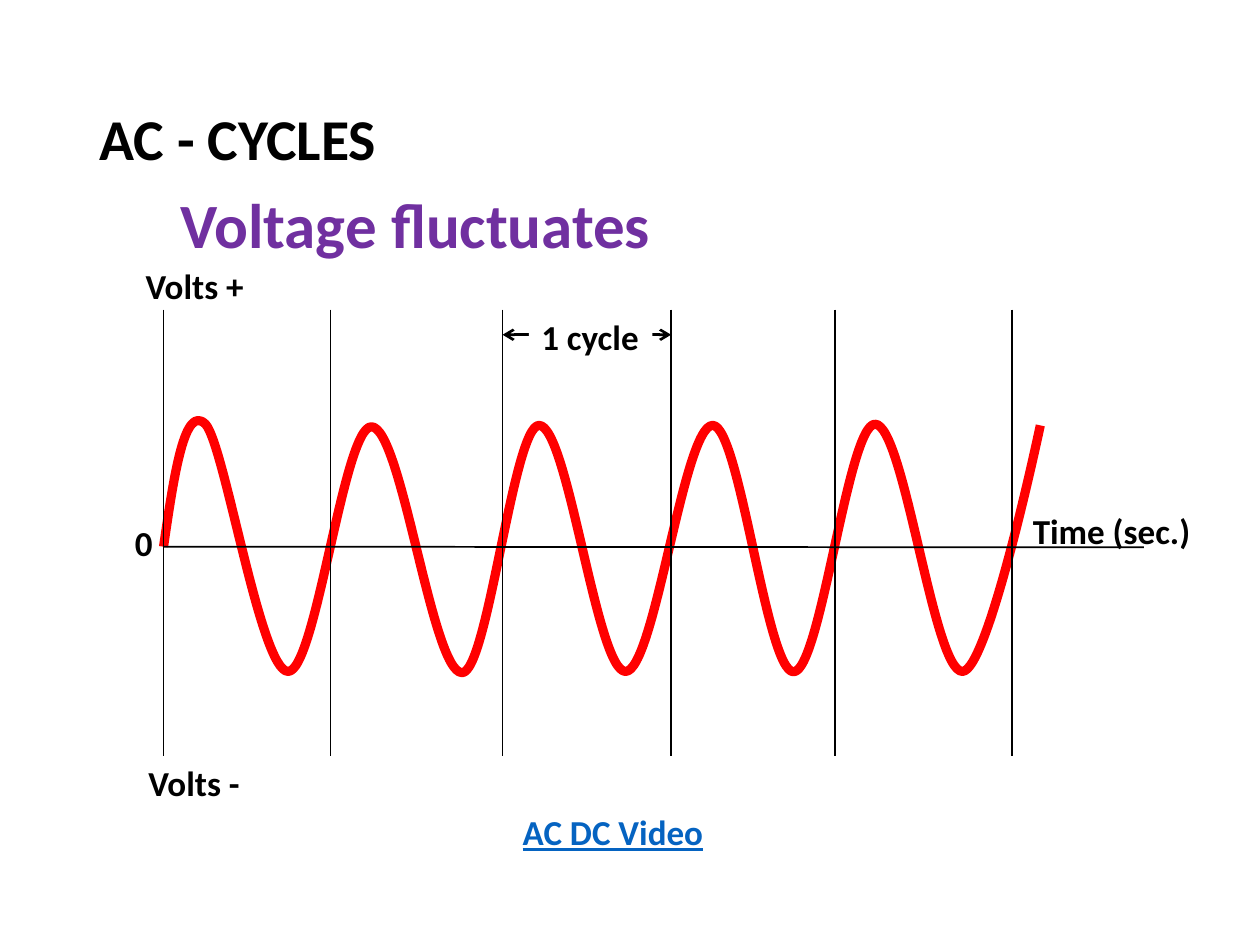
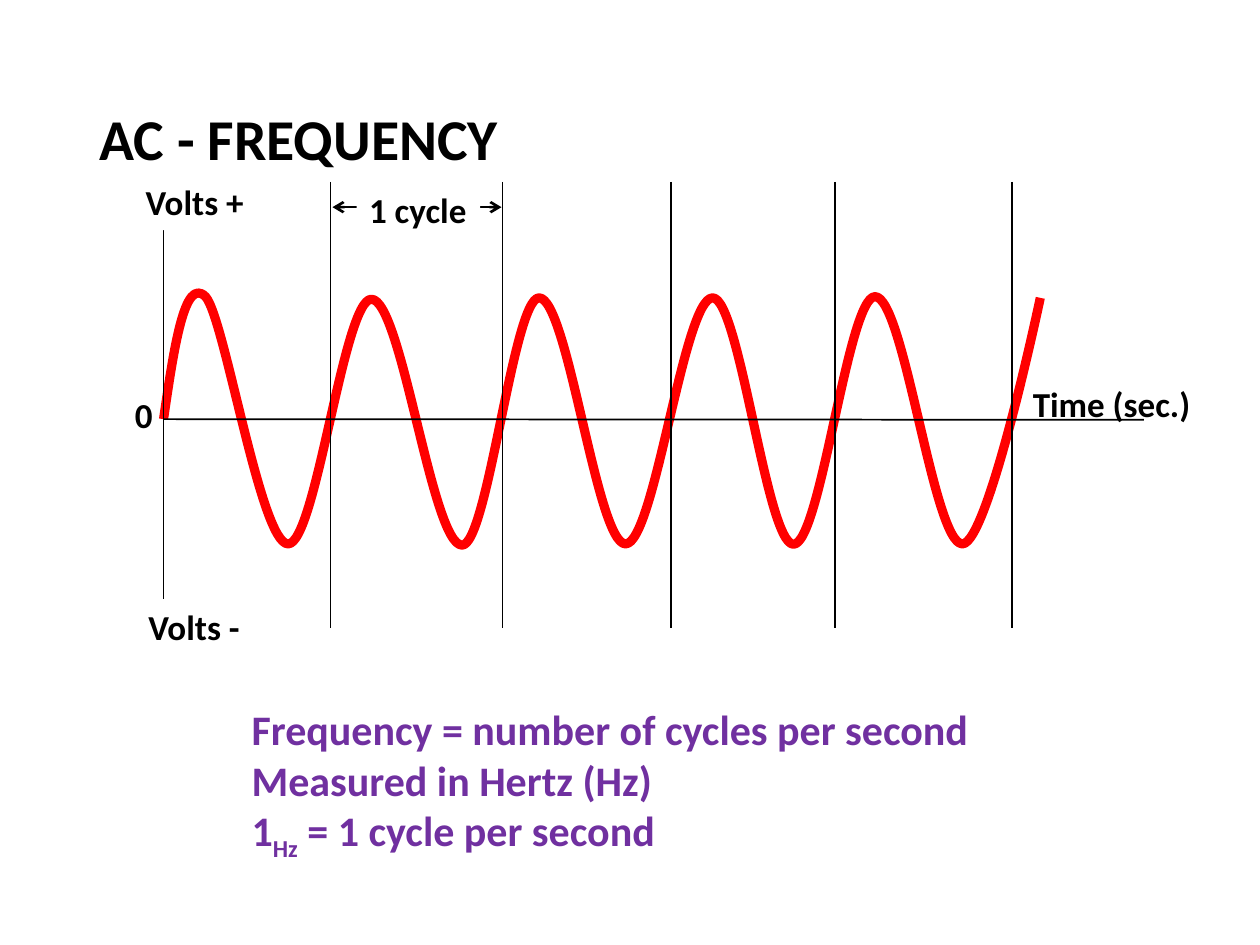
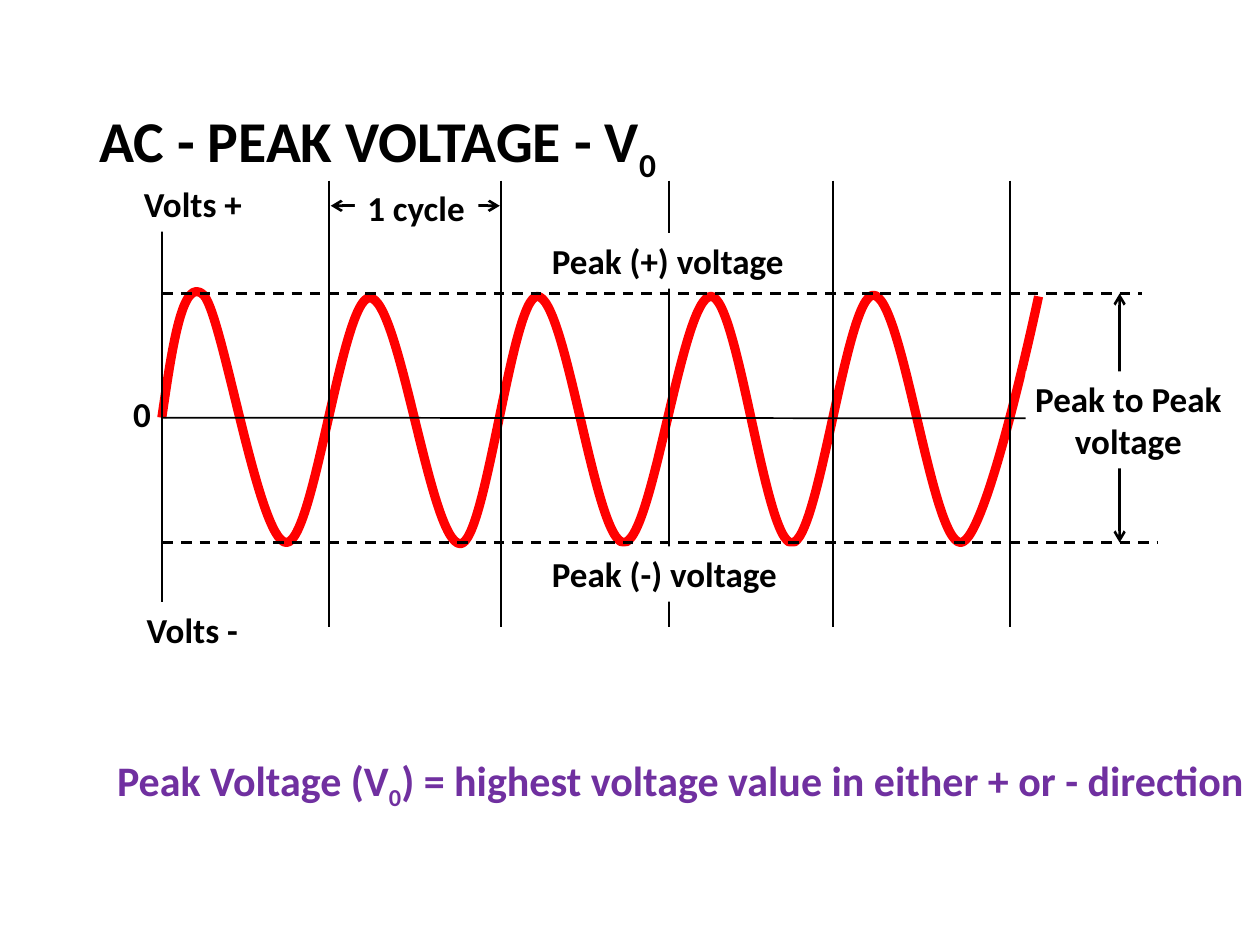
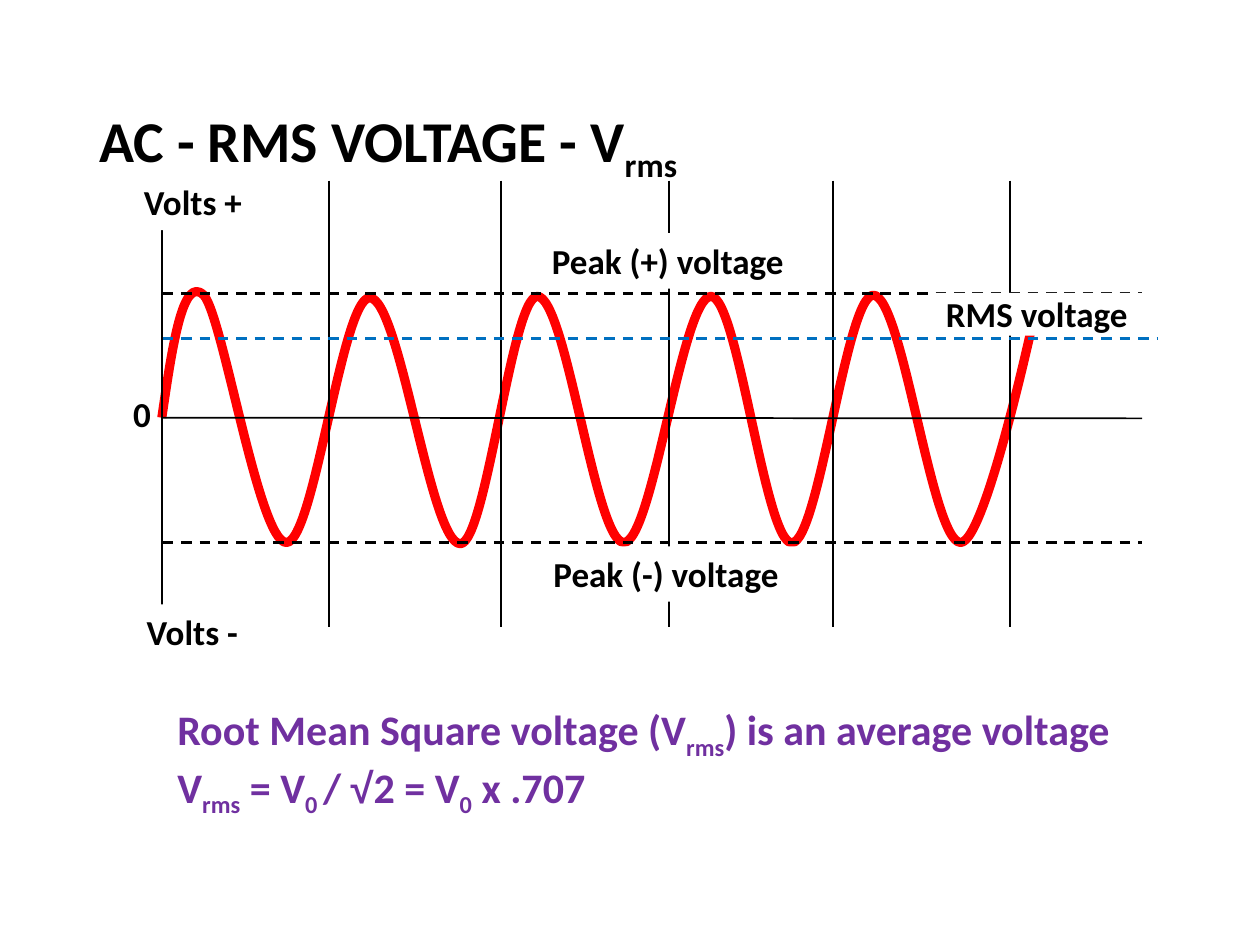
from lxml import etree
from pptx import Presentation
from pptx.dml.color import RGBColor
from pptx.enum import dml, shapes, text
from pptx.oxml import ns
from pptx.util import Pt

COLORS = {"ink": "000000", "paper": "FFFFFF", "wave": "FF0000",
          "accent": "7030A0", "link": "0563C1", "rms": "0070C0"}
FONT, MATH_FONT = "Calibri", "Arial"
LABEL_SIZE, NOTE_SIZE, TITLE_SIZE = 20, 24, 33
LABEL_HEIGHT = 31.7

# Graph geometry, in points from the origin of the axes
GRID = [0, 95.3, 193.7, 290, 383.5, 484.6]
GRID_TOP, GRID_BOTTOM = -135.5, 119.5
AXIS_LENGTH = 560.2
EXTREMES = [(24, -70), (71.2, 71.3), (118.8, -68.5), (170.6, 72), (214.6, -69.3),
            (264, 71.3), (313.8, -69.3), (360, 71.5), (406.6, -70),
            (456.5, 71.3), (501, -69.3)]
PEAK, TROUGH, RMS = -71, 71.3, -45.2


def color(name):
    return RGBColor.from_string(COLORS[name])


def sub(words):
    return words, "sub"


def math_sign(words):
    return words, "math"


def wave_curves():
    """Cubic curves as (handle, handle, end): flat at extremes, handles a third of the span long."""
    curves = [[(6, -41), (12, -82), EXTREMES[0]]]
    for start, end in zip(EXTREMES, EXTREMES[1:]):
        third = (end[0] - start[0]) / 3
        curves.append([(start[0] + third, start[1]), (end[0] - third, end[1]), end])
    curves[1][0] = (35, -58)
    curves[-1][1] = EXTREMES[-1]
    return curves


class Lesson:
    def __init__(self):
        self.deck = Presentation()
        self.deck.slide_width, self.deck.slide_height = Pt(720), Pt(540)
        self.page = None
        self.left = self.zero = 0

    def new_page(self, *title_runs):
        self.page = self.deck.slides.add_slide(self.deck.slide_layouts[6])
        box = self.text(49.6, 28.6, 620.6, 104.4, [title_runs], TITLE_SIZE, wrap=True)
        box.text_frame.auto_size = text.MSO_AUTO_SIZE.NONE
        box.text_frame.vertical_anchor = text.MSO_ANCHOR.MIDDLE
        box.text_frame.paragraphs[0].line_spacing = 0.9

    def text(self, x, y, width, height, paras, size=LABEL_SIZE, ink="ink",
             wrap=False, fill=None, underline=None):
        box = self.page.shapes.add_textbox(Pt(x), Pt(y), Pt(width), Pt(height))
        if fill:
            box.fill.solid()
            box.fill.fore_color.rgb = color(fill)
        frame = box.text_frame
        frame.word_wrap = wrap
        frame.auto_size = text.MSO_AUTO_SIZE.SHAPE_TO_FIT_TEXT
        for index, runs in enumerate(paras):
            para = frame.add_paragraph() if index else frame.paragraphs[0]
            for run in runs:
                words, kind = (run, "") if isinstance(run, str) else run
                span = para.add_run()
                span.text = words
                span.font.size, span.font.bold = Pt(size), True
                span.font.name = MATH_FONT if kind == "math" else FONT
                span.font.color.rgb = color(ink)
                span.font.underline = underline
                if kind == "sub":
                    span.font._element.set("baseline", "-25000")
        return box

    def label(self, words, dx, dy, width, height=LABEL_HEIGHT, fill="paper", wrap=False):
        """Text placed from the origin of the graph."""
        return self.text(self.left + dx, self.zero + dy, width, height, [[words]],
                         fill=fill, wrap=wrap)

    def note(self, x, y, width, height, *paras, wrap=False):
        self.text(x, y, width, height, paras, NOTE_SIZE, "accent", wrap)

    def line(self, x1, y1, x2, y2, width=1, ink="ink", dashed=False, arrows=False):
        """Line placed from the origin of the graph."""
        link = self.page.shapes.add_connector(
            shapes.MSO_CONNECTOR.STRAIGHT, Pt(self.left + x1), Pt(self.zero + y1),
            Pt(self.left + x2), Pt(self.zero + y2))
        link.line.width, link.line.color.rgb = Pt(width), color(ink)
        if dashed:
            link.line.dash_style = dml.MSO_LINE.DASH
        if arrows:
            for end in ("a:headEnd", "a:tailEnd"):
                etree.SubElement(link.line._get_or_add_ln(), ns.qn(end), type="arrow")
        etree.SubElement(link._element.spPr, ns.qn("a:effectLst"))

    def level(self, dy, length=AXIS_LENGTH, ink="ink"):
        self.line(0.5, dy, length, dy, 1.5, ink, dashed=True)

    def wave(self):
        """Outline through the extremes, its straight parts then bent into cubic curves."""
        curves = wave_curves()
        builder = self.page.shapes.build_freeform(Pt(self.left), Pt(self.zero))
        builder.add_line_segments([(Pt(self.left + x), Pt(self.zero + y))
                                   for *_, (x, y) in curves], close=False)
        shape = builder.convert_to_shape()
        parts = list(shape._element.iter(ns.qn("a:lnTo")))
        for part, curve in zip(parts, curves):
            part.tag = ns.qn("a:cubicBezTo")
            part.remove(part[0])
            for x, y in curve:
                etree.SubElement(part, ns.qn("a:pt"),
                                 x=str(Pt(self.left + x) - shape.left),
                                 y=str(Pt(self.zero + y) - shape.top))
        shape.shadow.inherit = False
        shape.fill.background()
        shape.line.width, shape.line.color.rgb = Pt(5.25), color("wave")

    def graph(self, left, zero, plus, minus, cycle=None, time=False, fill="paper"):
        """Wave on its axes; cycle is the index of the grid line where the marked cycle starts."""
        self.left, self.zero = left, zero
        if cycle is not None:
            arrow_y, shift = GRID_TOP + 14.4, 1.2 if cycle == 1 else 0
            self.line(GRID[cycle] + shift, arrow_y, GRID[cycle + 1] - shift / 2, arrow_y,
                      1.5, arrows=True)
        self.wave()
        self.line(0, 0, AXIS_LENGTH, 0.4)
        self.line(0, GRID_TOP, 0, GRID_BOTTOM)
        self.label("Volts -", -15.8, minus, 67, fill=fill)
        self.label("0", -23.5, -18.2, 24.5, fill=None)
        for x in GRID[1:]:
            self.line(x, GRID_TOP, x, GRID_BOTTOM)
        if time:
            self.label("Time (sec.)", 489.6, -24.5, 105, fill=None)
        self.label("Volts +", -17.4, plus, 71.3, fill=fill)
        if cycle is not None:
            self.label("1 cycle", GRID[cycle] + 15, GRID_TOP, 70.6)

    def peaks(self, trough_length=AXIS_LENGTH, trough_label=215.8):
        self.level(PEAK)
        self.level(TROUGH, trough_length)
        self.label("Peak (+) voltage", 215.8, -105.4, 148.3)
        self.label("Peak (-) voltage", trough_label, 73.5, 148.3)


def main():
    lesson = Lesson()

    lesson.new_page("AC - CYCLES")
    lesson.graph(93.5, 312.4, plus=-165, minus=119.5, cycle=2, time=True, fill=None)
    lesson.text(291.6, 459.8, 118.8, LABEL_HEIGHT, [["AC DC Video"]],
                ink="link", underline=True)
    lesson.text(95.8, 102.2, 286.6, 51, [["Voltage fluctuates"]], 36, "accent")

    lesson.new_page("AC - FREQUENCY")
    lesson.graph(93.5, 239.5, plus=-139.7, minus=102.9, cycle=1, time=True)
    lesson.note(136.7, 398.7, 427.7, 94.3,
                ["Frequency = number of cycles per second"],
                ["Measured in Hertz (Hz)"],
                ["1", sub("Hz"), " = 1 cycle per second"])

    lesson.new_page("AC - PEAK VOLTAGE - V", sub("0"))
    lesson.note(59.8, 427.5, 671.8, 36,
                ["Peak Voltage (V", sub("0"),
                 ") = highest voltage value in either + or - direction"])
    lesson.graph(92.5, 238.7, plus=-138, minus=105.4, cycle=1)
    lesson.line(547.3, PEAK, 547.3, TROUGH, 1.5, arrows=True)
    lesson.peaks(trough_length=569.2)
    box = lesson.label("Peak to Peak voltage", 493.6, -26.4, 117.4, 55.4, wrap=True)
    box.text_frame.margin_left = box.text_frame.margin_right = 0
    box.text_frame.paragraphs[0].alignment = text.PP_ALIGN.CENTER

    lesson.new_page("AC - RMS VOLTAGE - V", sub("rms"))
    lesson.note(94.3, 398.7, 595.4, 65.5,
                ["Root Mean Square voltage (V", sub("rms"), ") is an average voltage"],
                ["V", sub("rms"), " = V", sub("0 "), "/ ", math_sign("√"),
                 "2 = V", sub("0"), " x .707"], wrap=True)
    lesson.graph(92.5, 238.7, plus=-138.9, minus=106.7)
    lesson.peaks(trough_label=216.7)
    lesson.level(RMS, 569.2, "rms")
    box = lesson.label("RMS voltage", 441, -71.3, 119.5, 24.5)
    box.text_frame.margin_top = box.text_frame.margin_bottom = 0

    lesson.deck.save("out.pptx")


if __name__ == "__main__":
    main()
